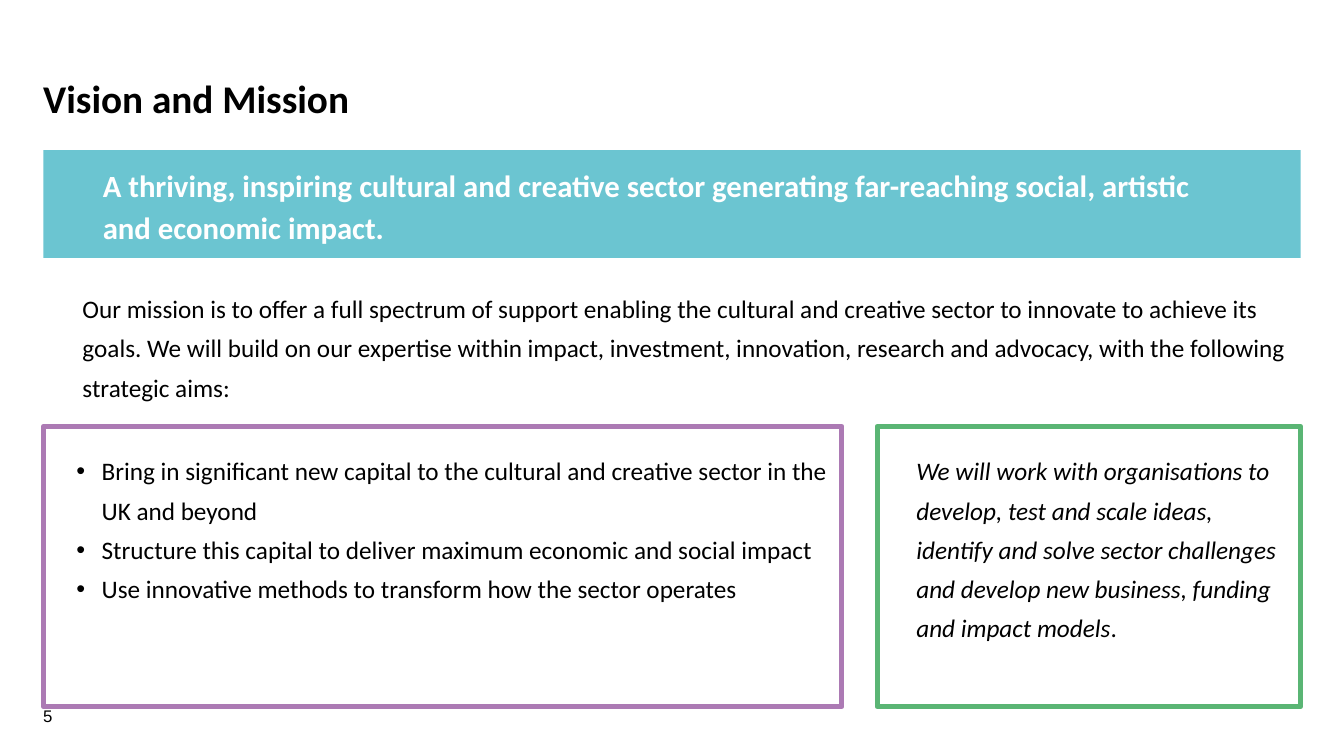
from dataclasses import dataclass
from typing import Optional

from lxml.etree import SubElement
from pptx import Presentation
from pptx.dml.color import RGBColor
from pptx.enum.shapes import MSO_SHAPE
from pptx.enum.text import MSO_ANCHOR, PP_ALIGN
from pptx.oxml.ns import qn
from pptx.util import Emu, Pt

PX = 9144  # 100 px to the inch
BLACK = RGBColor(0x00, 0x00, 0x00)
WHITE = RGBColor(0xFF, 0xFF, 0xFF)
TEAL = RGBColor(0x6B, 0xC5, 0xD1)
PURPLE = RGBColor(0xAC, 0x7A, 0xB4)
GREEN = RGBColor(0x5A, 0xB5, 0x74)

LEFT, WIDTH = 43, 1247
PANEL_TOP, PANEL_HEIGHT = 423, 278
AIMS_WIDTH, APPROACH_WIDTH = 792, 420


def px(length: int) -> Emu:
    return Emu(length * PX)


@dataclass(frozen=True)
class Block:
    left: int
    top: int
    width: int
    height: int
    text: str
    size: int = 18
    font: str = "Calibri"
    color: RGBColor = BLACK
    bold: bool = False
    italic: bool = False
    spacing: float = 1.3
    inset_x: int = 10
    inset_y: int = 5
    indent: int = 0
    hanging: int = 0
    fill: Optional[RGBColor] = None
    outline: Optional[RGBColor] = None
    anchor: MSO_ANCHOR = MSO_ANCHOR.TOP
    upright_end: str = ""


PAGE_NUMBER = Block(33, 695, 58, 30, "5", size=12, font="Arial", spacing=1.0)
TITLE = Block(33, 74, 1150, 54, "Vision and Mission", size=28, bold=True, spacing=0.9)
VISION = Block(
    LEFT, 149, WIDTH, 107,
    "A thriving, inspiring cultural and creative sector generating far-reaching "
    "social, artistic and economic impact.",
    size=22, color=WHITE, bold=True, spacing=1.12, inset_x=59,
    fill=TEAL, anchor=MSO_ANCHOR.MIDDLE,
)
MISSION = Block(
    LEFT, 277, WIDTH, 129,
    "Our mission is to offer a full spectrum of support enabling the cultural and "
    "creative sector to innovate to achieve its goals. We will build on our expertise "
    "within impact, investment, innovation, research and advocacy, with the following "
    "strategic aims:",
    indent=29,
)
AIMS = Block(
    LEFT, PANEL_TOP, AIMS_WIDTH, PANEL_HEIGHT,
    "Bring in significant new capital to the cultural and creative sector in the UK "
    "and beyond\n"
    "Structure this capital to deliver maximum economic and social impact\n"
    "Use innovative methods to transform how the sector operates",
    inset_y=20, indent=48, hanging=25, outline=PURPLE,
)
APPROACH = Block(
    LEFT + WIDTH - APPROACH_WIDTH, PANEL_TOP, APPROACH_WIDTH, PANEL_HEIGHT,
    "We will work with organisations to develop, test and scale ideas, identify and "
    "solve sector challenges and develop new business, funding and impact models",
    italic=True, inset_y=20, indent=29, outline=GREEN, upright_end=".",
)


def add_box(page, block: Block):
    """Add a text box, or a rectangle when the block has a fill or an outline."""
    place = [px(n) for n in (block.left, block.top, block.width, block.height)]
    if block.fill is None and block.outline is None:
        return page.shapes.add_textbox(*place)
    box = page.shapes.add_shape(MSO_SHAPE.RECTANGLE, *place)
    box.shadow.inherit = False
    if block.fill is None:
        box.fill.background()
    else:
        box.fill.solid()
        box.fill.fore_color.rgb = block.fill
    if block.outline is None:
        box.line.fill.background()
    else:
        box.line.color.rgb = block.outline
        box.line.width = Pt(3.75)
        SubElement(box.line._get_or_add_ln(), qn("a:round"))
    return box


def format_paragraph(para, block: Block) -> None:
    para.alignment = PP_ALIGN.LEFT
    para.line_spacing = block.spacing
    properties = para._p.get_or_add_pPr()
    properties.set("marL", str(px(block.indent)))
    properties.set("indent", str(px(-block.hanging)))
    if block.hanging:
        SubElement(properties, qn("a:buFont"), typeface="Arial")
        SubElement(properties, qn("a:buChar"), char="•")
    for span in para.runs:
        span.font.name = block.font
        span.font.size = Pt(block.size)
        span.font.bold = block.bold
        span.font.italic = block.italic
        span.font.color.rgb = block.color


def draw_block(page, block: Block) -> None:
    frame = add_box(page, block).text_frame
    frame.word_wrap = True
    frame.vertical_anchor = block.anchor
    frame.margin_left = frame.margin_right = px(block.inset_x)
    frame.margin_top = frame.margin_bottom = px(block.inset_y)
    frame.text = block.text
    if block.upright_end:
        frame.paragraphs[-1].add_run().text = block.upright_end
    for para in frame.paragraphs:
        format_paragraph(para, block)
    if block.upright_end:
        frame.paragraphs[-1].runs[-1].font.italic = False


def main() -> None:
    deck = Presentation()
    deck.slide_width, deck.slide_height = px(1333), px(750)
    page = deck.slides.add_slide(deck.slide_layouts[6])
    for block in (PAGE_NUMBER, TITLE, VISION, MISSION, AIMS, APPROACH):
        draw_block(page, block)
    deck.save("out.pptx")


if __name__ == "__main__":
    main()
